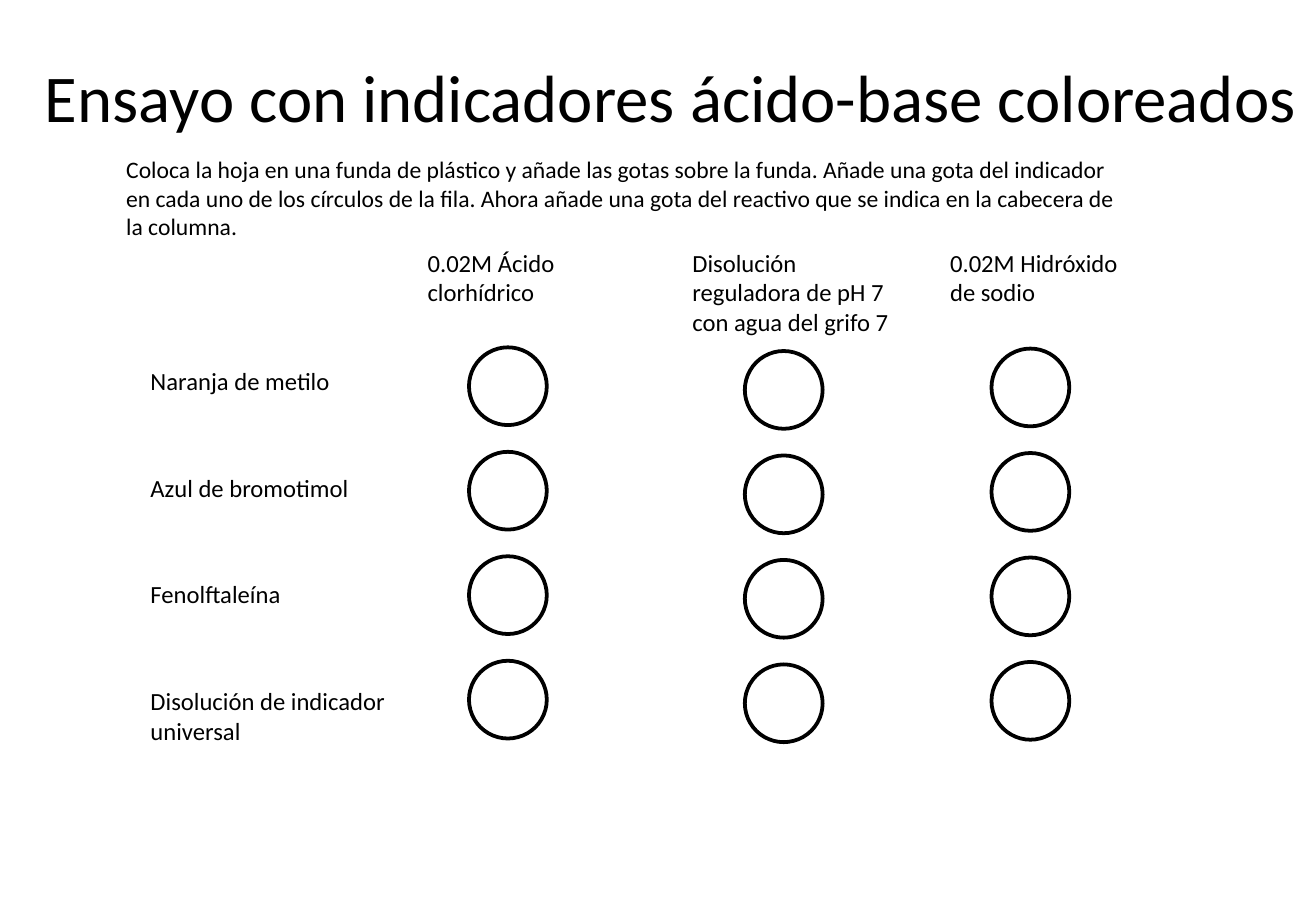
"""Build the worksheet slide for testing acid-base indicators."""
from pptx import Presentation
from pptx.dml.color import RGBColor
from pptx.enum import shapes, text
from pptx.util import Inches, Pt

TITLE = "Ensayo con indicadores ácido-base coloreados"
GUIDE = (
    "Coloca la hoja en una funda de plástico y añade las gotas sobre la funda. "
    "Añade una gota del indicador en cada uno de los círculos de la fila. "
    "Ahora añade una gota del reactivo que se indica en la cabecera de la columna."
)
# header, header left, header width, header height, circle left, circle top
REAGENTS = [
    ("0.02M Ácido clorhídrico", 3.42, 1.81, 0.59, 3.86, 2.86),
    ("Disolución reguladora de pH 7 con agua del grifo 7", 5.6, 1.93, 0.84, 6.13, 2.89),
    ("0.02M Hidróxido de sodio", 7.72, 1.81, 0.59, 8.16, 2.87),
]
DYES = [
    ("Naranja de metilo", 0.35),
    ("Azul de bromotimol", 0.35),
    ("Fenolftaleína", 0.35),
    ("Disolución de indicador universal", 0.59),
]
COLORS = {"ink": "000000", "paper": "FFFFFF"}
FACE = "Calibri"
HEAD_TOP = 1.99
DYE_LEFT, DYE_TOP, DYE_WIDTH, DYE_STEP = 1.14, 2.96, 2.16, 0.88
DROP_SIZE, DROP_STEP = 0.64, 0.86


def color(name):
    """Return a named colour."""
    return RGBColor.from_string(COLORS[name])


def write(shape, words, size):
    """Put one styled paragraph in a shape."""
    frame = shape.text_frame
    frame.word_wrap = True
    frame.text = words
    line = frame.paragraphs[0]
    line.alignment = text.PP_ALIGN.LEFT
    line.font.name = FACE
    line.font.size = Pt(size)
    line.font.color.rgb = color("ink")
    return line


def label(slide, words, box, size=14.6):
    """Add a text box at left, top, width, height."""
    write(slide.shapes.add_textbox(*map(Inches, box)), words, size)


def drop(slide, left, top):
    """Add one test circle."""
    ring = slide.shapes.add_shape(
        shapes.MSO_SHAPE.OVAL, *map(Inches, (left, top, DROP_SIZE, DROP_SIZE))
    )
    ring.shadow.inherit = False
    ring.fill.solid()
    ring.fill.fore_color.rgb = color("paper")
    ring.line.color.rgb = color("ink")
    ring.line.width = Pt(2.25)


def main():
    """Build and save the slide."""
    deck = Presentation()
    deck.slide_width, deck.slide_height = Inches(10.83), Inches(7.5)
    slide = deck.slides.add_slide(deck.slide_layouts[5])

    title = slide.shapes.title
    title.left, title.top, title.width, title.height = map(
        Inches, (0.27, 0.24, 10.91, 1.18)
    )
    write(title, TITLE, 39.6).line_spacing = 0.9
    title.text_frame.auto_size = text.MSO_AUTO_SIZE.NONE
    title.text_frame.vertical_anchor = text.MSO_ANCHOR.MIDDLE

    label(slide, GUIDE, (0.94, 1.23, 8.4, 0.81), 14)
    for row, (dye, height) in enumerate(DYES):
        label(slide, dye, (DYE_LEFT, DYE_TOP + row * DYE_STEP, DYE_WIDTH, height))
    for head, left, width, height, drop_left, drop_top in REAGENTS:
        label(slide, head, (left, HEAD_TOP, width, height))
        for row in range(len(DYES)):
            drop(slide, drop_left, drop_top + row * DROP_STEP)

    deck.save("out.pptx")


if __name__ == "__main__":
    main()
